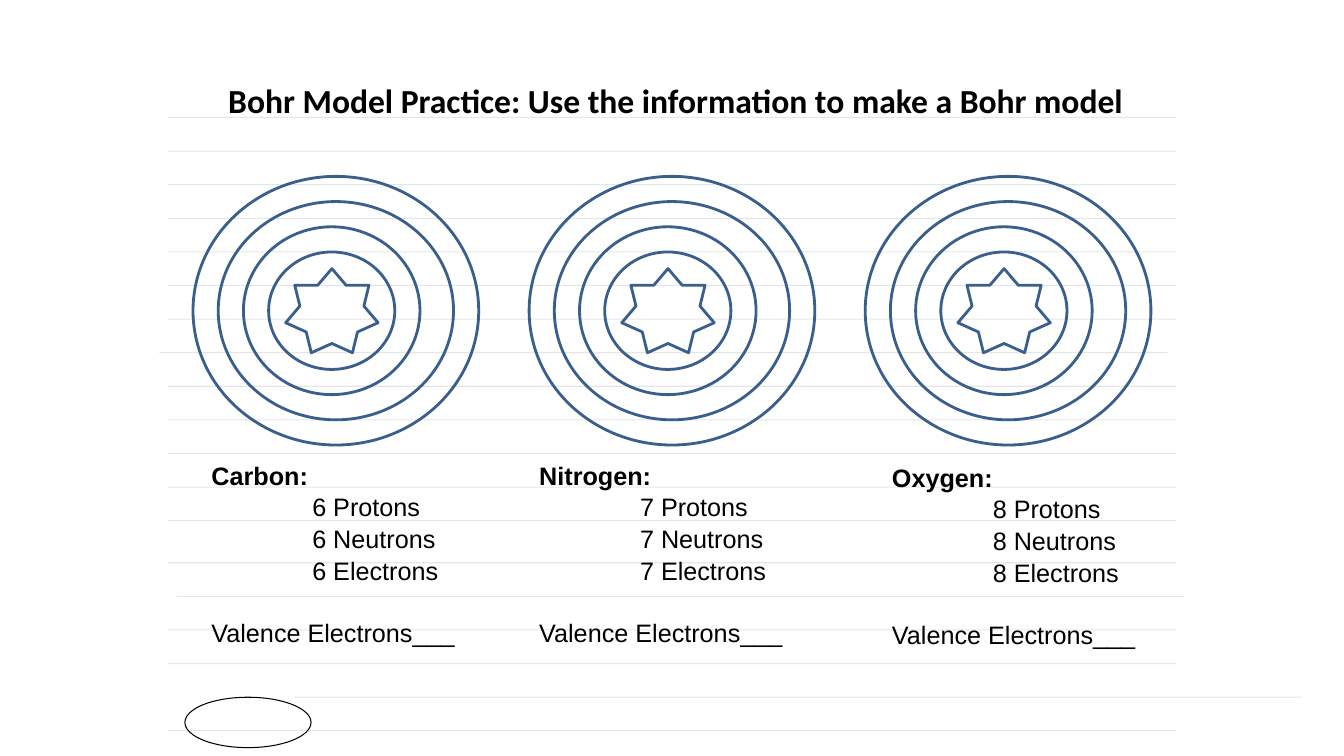
import pptx
import pptx.util
import pptx.dml.color
import pptx.enum.shapes
import pptx.enum.text
import pptx.oxml.ns
from lxml import etree

Cm = pptx.util.Cm
Pt = pptx.util.Pt
SHAPE = pptx.enum.shapes.MSO_SHAPE
ALIGN = pptx.enum.text.PP_ALIGN

COLORS = {"ink": "000000", "shell": "3A5F8C"}
RULE_PITCH = 2.54 / 3
RULE_LEFT, RULE_LENGTH = 4.23, 25.4
UPPER_RULES = [2.96 + RULE_PITCH * i for i in range(13)]
LOWER_RULES = [14.18 + RULE_PITCH * i for i in range(6)]
SHIFTED_RULES = {7: 4.02, 14: 4.45, 17: 7.41}
ATOM_PITCH = 8.47
SHELL_WIDTHS = [3.18, 4.45, 5.93, 7.2]
SHELL_STEP = 0.635
ATOMS = [
    ("Carbon", 6, 5.08, 11.43, 4.87),
    ("Nitrogen", 7, 13.34, 11.43, 5.64),
    ("Oxygen", 8, 22.23, 11.48, 5.64),
]


def color(name):
    return pptx.dml.color.RGBColor.from_string(COLORS[name])


def write(paragraph, text, size=18, font="Arial", bold=False, align=ALIGN.LEFT,
          indent=0, before=0, spacing=1.0):
    paragraph.alignment = align
    paragraph.space_before = Pt(before)
    paragraph.line_spacing = spacing
    if indent:
        properties = paragraph._p.get_or_add_pPr()
        properties.set("marL", str(Cm(indent)))
        properties.set("indent", "0")
    run = paragraph.add_run()
    run.text = text
    run.font.size = Pt(size)
    run.font.name = font
    run.font.bold = bold
    run.font.color.rgb = color("ink")


class Worksheet:
    def __init__(self, slide):
        self.slide = slide

    def rule(self, left, top):
        """Draw one faint line of the ruled paper."""
        connector = self.slide.shapes.add_connector(
            pptx.enum.shapes.MSO_CONNECTOR.STRAIGHT,
            Cm(left), Cm(top), Cm(left + RULE_LENGTH), Cm(top))
        connector.line.width = Pt(0.75)
        connector.line.color.rgb = color("ink")
        qn = pptx.oxml.ns.qn
        fill = connector._element.spPr.find(".//" + qn("a:srgbClr"))
        etree.SubElement(fill, qn("a:alpha")).set("val", "10000")
        etree.SubElement(connector._element.spPr, qn("a:effectLst"))

    def outline(self, shapes, kind, left, top, width, height, line="shell", weight=2):
        shape = shapes.add_shape(kind, Cm(left), Cm(top), Cm(width), Cm(height))
        shape.shadow.inherit = False
        shape.fill.background()
        shape.line.color.rgb = color(line)
        shape.line.width = Pt(weight)

    def atom(self, offset):
        """Group four electron shells around a star nucleus."""
        shapes = self.slide.shapes.add_group_shape().shapes
        for i, width in enumerate(SHELL_WIDTHS):
            self.outline(shapes, SHAPE.OVAL, offset + 6.77 - SHELL_STEP * i,
                         6.35 - SHELL_STEP * i, width, 2.96 + 2 * SHELL_STEP * i)
        self.outline(shapes, SHAPE.STAR_7_POINT, offset + 7.2, 6.77, 2.33, 2.12)

    def text_box(self, left, top, width, height, lines):
        box = self.slide.shapes.add_textbox(Cm(left), Cm(top), Cm(width), Cm(height))
        frame = box.text_frame
        frame.word_wrap = True
        frame.auto_size = pptx.enum.text.MSO_AUTO_SIZE.SHAPE_TO_FIT_TEXT
        for i, (text, style) in enumerate(lines):
            paragraph = frame.add_paragraph() if i else frame.paragraphs[0]
            write(paragraph, text, **style)


def main():
    presentation = pptx.Presentation()
    presentation.slide_width, presentation.slide_height = Cm(33.87), Cm(19.05)
    slide = presentation.slides.add_slide(presentation.slide_layouts[6])
    sheet = Worksheet(slide)

    for i, top in enumerate(UPPER_RULES + LOWER_RULES):
        sheet.rule(SHIFTED_RULES.get(i, RULE_LEFT), top)
    sheet.outline(slide.shapes, SHAPE.OVAL, 4.66, 17.57, 3.18, 1.27, line="ink", weight=0.75)
    sheet.text_box(4.23, 1.88, 25.6, 1.28, [
        ("Bohr Model Practice: Use the information to make a Bohr model",
         dict(size=24, font="Calibri", bold=True, align=ALIGN.CENTER))])

    for i in range(len(ATOMS)):
        sheet.atom(ATOM_PITCH * i)
    for element, count, left, top, height in ATOMS:
        lines = [(f"{element}:", dict(bold=True, spacing=1.05))]
        lines += [(f"{count} {particle}", dict(indent=2.54, spacing=1.05))
                  for particle in ("Protons", "Neutrons", "Electrons")]
        lines.append(("Valence Electrons___", dict(before=21.7, spacing=1.05)))
        sheet.text_box(left, top, 6.78, height, lines)

    presentation.save("out.pptx")


if __name__ == "__main__":
    main()
